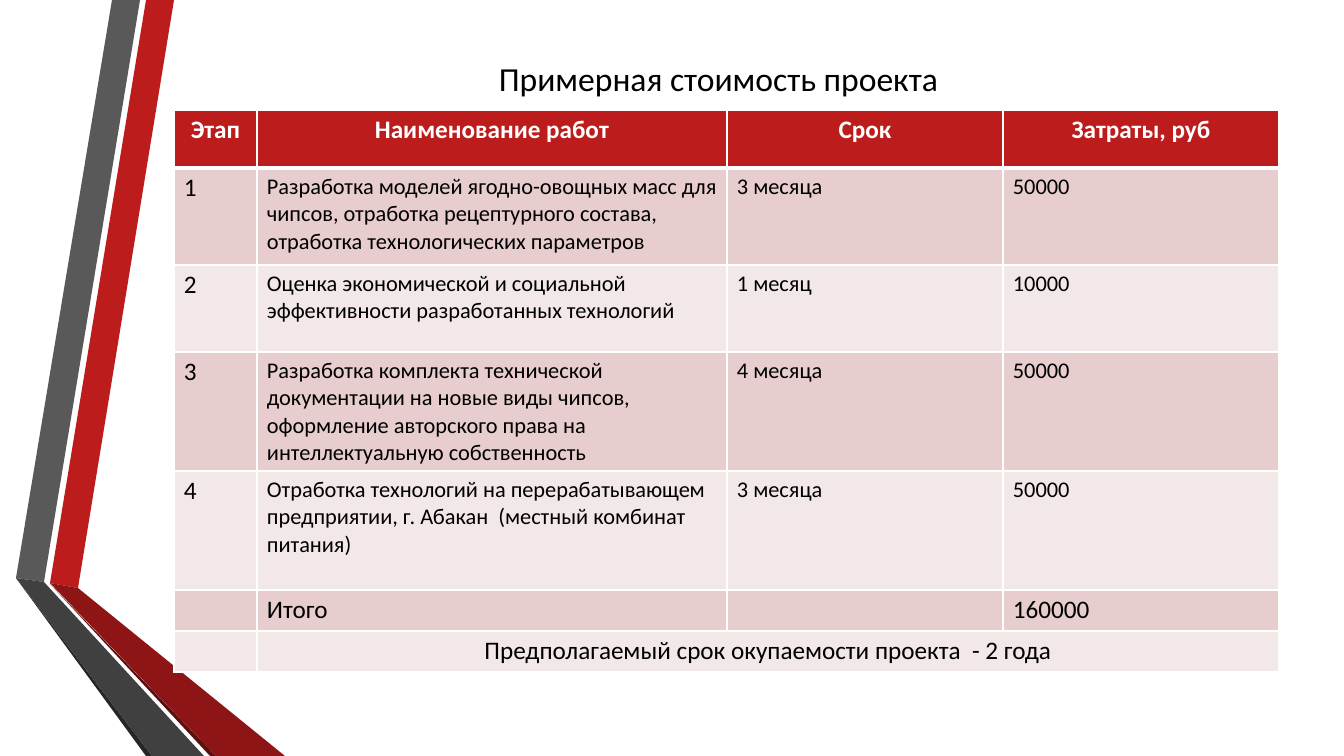
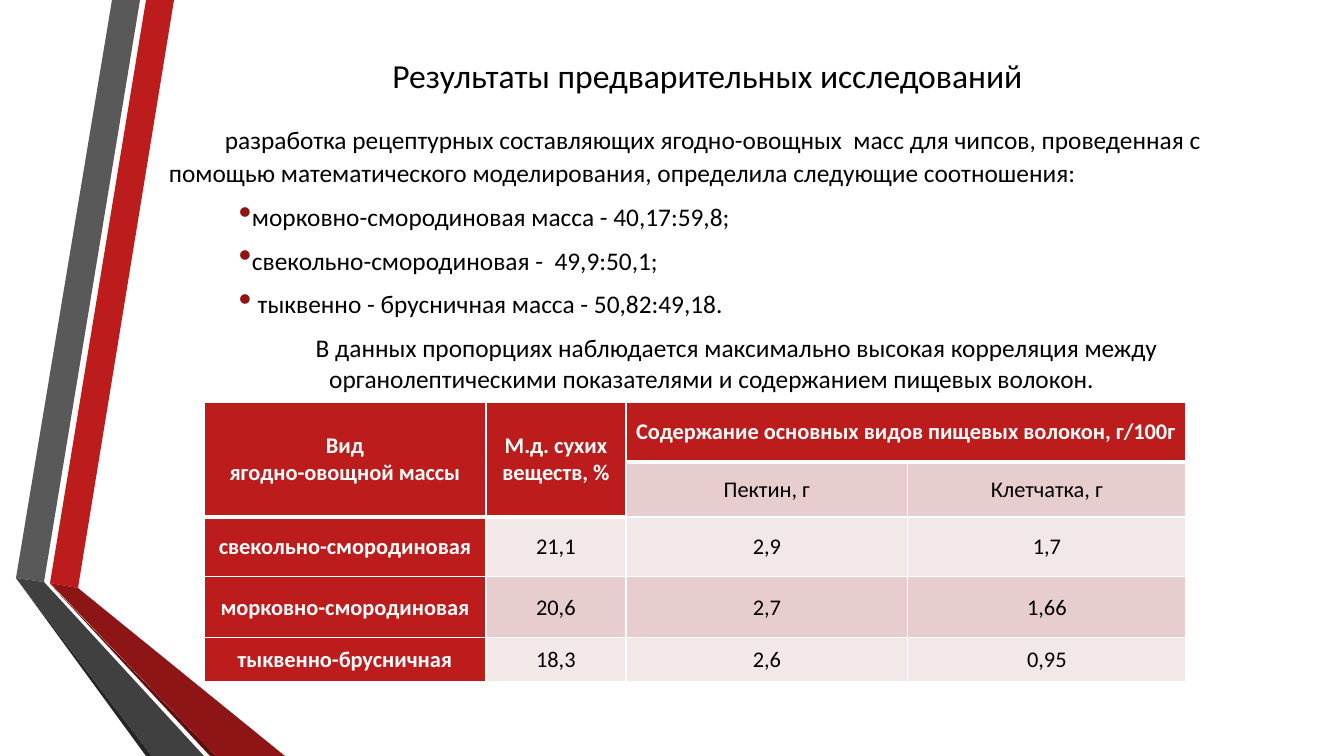
import dataclasses

import lxml.etree
import pptx
import pptx.dml.color
import pptx.enum.text
import pptx.oxml.ns
import pptx.util

ALIGN = pptx.enum.text.PP_ALIGN
ANCHOR = pptx.enum.text.MSO_ANCHOR
UNIT = 914400 / 100.8  # EMU in one px


@dataclasses.dataclass(frozen=True)
class Theme:
    font: str = "Calibri"
    white: str = "FFFFFF"
    black: str = "000000"
    red: str = "BC1C1C"
    wine: str = "8D1515"
    maroon: str = "5E0E0E"
    grey: str = "595959"
    coal: str = "404040"
    soot: str = "262626"
    rose: str = "E7CDCD"
    blush: str = "F3E8E8"
    title: float = 24
    body: float = 18.1
    large: float = 18
    small: float = 16
    thin: float = 1
    thick: float = 3


theme = Theme()


def style(part, size, color=theme.black, bold=False, **form):
    """Give a paragraph its font and the format values in form."""
    part.font.color.rgb = pptx.dml.color.RGBColor.from_string(color)
    look = {"name": theme.font, "size": pptx.util.Pt(size), "bold": bold}
    for name, value in look.items():
        setattr(part.font, name, value)
    for name, value in form.items():
        setattr(part, name, value)


def add(root, tag, **attrs):
    """Append a drawing element with its attributes."""
    node = lxml.etree.SubElement(root, pptx.oxml.ns.qn("a:" + tag))
    for name, value in attrs.items():
        node.set(name, str(value))
    return node


deck = pptx.Presentation()
deck.slide_width = round(1344 * UNIT)
deck.slide_height = round(756 * UNIT)
blank = deck.slide_layouts[6]

pages = [
    {
        "title": "Примерная стоимость проекта",
        "box": (166, 61, 1105, 35),
        "at": (174, 110),
        "cols": [83, 470, 276, 276],
        "rows": [58, 97, 87, 119, 119, 41, 41],
        "heads": [1, 1, 1, 1],
        "side": False,
        "inset": (10, 5),
        "anchor": ANCHOR.TOP,
        "merge": [(6, 1, 6, 3)],
        "small": {(row, col) for row in range(1, 5) for col in range(1, 4)},
        "center": {(0, 0), (0, 1), (0, 2), (0, 3), (6, 1)},
        "cells": [
            ["Этап", "Наименование работ", "Срок", "Затраты, руб"],
            ["1", "Разработка моделей ягодно-овощных масс для чипсов, отработка "
             "рецептурного состава, отработка технологических параметров",
             "3 месяца", "50000"],
            ["2", "Оценка экономической и социальной эффективности "
             "разработанных технологий", "1 месяц", "10000"],
            ["3", "Разработка комплекта технической документации на новые виды "
             "чипсов, оформление авторского права на интеллектуальную "
             "собственность", "4 месяца", "50000"],
            ["4", "Отработка технологий на перерабатывающем предприятии, "
             "г. Абакан  (местный комбинат питания)", "3 месяца", "50000"],
            ["", "Итого", "", "160000"],
            ["", "Предполагаемый срок окупаемости проекта  - 2 года", "", ""],
        ],
    },
    {
        "title": "Результаты предварительных исследований",
        "box": (155, 47, 1105, 56),
        "at": (204, 402),
        "cols": [282, 140, 282, 278],
        "rows": [60, 55, 60, 61, 44],
        "heads": [2, 2, 1, 1],
        "side": True,
        "inset": (7, 0),
        "anchor": ANCHOR.MIDDLE,
        "merge": [(0, 0, 1, 0), (0, 1, 1, 1), (0, 2, 0, 3)],
        "small": {(row, col) for row in range(5) for col in range(4)},
        "center": {(row, col) for row in range(5) for col in range(4)},
        "cells": [
            ["Вид\nягодно-овощной массы", "М.д. сухих веществ, %",
             "Содержание основных видов пищевых волокон, г/100г", ""],
            ["", "", "Пектин, г", "Клетчатка, г"],
            ["свекольно-смородиновая", "21,1", "2,9", "1,7"],
            ["морковно-смородиновая", "20,6", "2,7", "1,66"],
            ["тыквенно-брусничная", "18,3", "2,6", "0,95"],
        ],
    },
]
slides = [deck.slides.add_slide(blank) for page in pages]

# Folded ribbons, drawn once and moved to the shared layout
ribbons = [
    (theme.red, [(50, 583), (78, 588), (174, 0), (146, 0)]),
    (theme.grey, [(140, 0), (112, 0), (16, 578), (44, 582)]),
    (theme.soot, [(16, 578), (146, 756), (152, 756)]),
    (theme.maroon, [(50, 584), (210, 756), (216, 756)]),
    (theme.wine, [(50, 583), (216, 756), (285, 756), (78, 588)]),
    (theme.coal, [(204, 756), (44, 582), (16, 578), (152, 756)]),
]
for color, points in ribbons:
    pen = slides[0].shapes.build_freeform(*points[0], scale=UNIT)
    pen.add_line_segments(points[1:], close=True)
    ribbon = pen.convert_to_shape()
    ribbon.shadow.inherit = False
    ribbon.fill.solid()
    ribbon.fill.fore_color.rgb = pptx.dml.color.RGBColor.from_string(color)
    ribbon.line.fill.background()
    blank.shapes.element.append(ribbon.element)

# Titles and tables
for slide, page in zip(slides, pages):
    box = slide.shapes.add_textbox(*[round(n * UNIT) for n in page["box"]])
    frame = box.text_frame
    form = {"word_wrap": True, "vertical_anchor": ANCHOR.MIDDLE,
            "margin_top": 0, "margin_bottom": 0, "text": page["title"]}
    for name, value in form.items():
        setattr(frame, name, value)
    style(frame.paragraphs[0], theme.title, alignment=ALIGN.CENTER)

    cols, rows, heads = page["cols"], page["rows"], page["heads"]
    area = (*page["at"], sum(cols), sum(rows))
    table = slide.shapes.add_table(
        len(rows), len(cols), *[round(n * UNIT) for n in area]).table
    table.first_row = table.horz_banding = False
    for col, width in zip(table.columns, cols):
        col.width = round(width * UNIT)
    for row, height in zip(table.rows, rows):
        row.height = round(height * UNIT)

    wide, high = [round(n * UNIT) for n in page["inset"]]
    form = {"margin_left": wide, "margin_right": wide, "margin_top": high,
            "margin_bottom": high, "vertical_anchor": page["anchor"]}
    for r, texts in enumerate(page["cells"]):
        for c, text in enumerate(texts):
            cell = table.cell(r, c)
            for name, value in form.items():
                setattr(cell, name, value)
            strong = r < heads[c] or (page["side"] and c == 0)
            band = theme.rose if r % 2 else theme.blush
            cell.fill.solid()
            cell.fill.fore_color.rgb = pptx.dml.color.RGBColor.from_string(
                theme.red if strong else band)

            cell.text_frame.text = text
            for para in cell.text_frame.paragraphs:
                style(para,
                      theme.small if (r, c) in page["small"] else theme.large,
                      theme.white if strong else theme.black, strong,
                      alignment=ALIGN.CENTER if (r, c) in page["center"]
                      else ALIGN.LEFT)

            props = cell._tc.get_or_add_tcPr()
            weights = {"lnL": theme.thin, "lnR": theme.thin,
                       "lnT": theme.thick if r == heads[c] else theme.thin,
                       "lnB": theme.thick if r + 1 == heads[c] else theme.thin}
            for spot, (tag, weight) in enumerate(weights.items()):
                edge = add(props, tag, w=pptx.util.Pt(weight))
                add(add(edge, "solidFill"), "srgbClr", val=theme.white)
                props.insert(spot, edge)
    for top, left, low, right in page["merge"]:
        table.cell(top, left).merge(table.cell(low, right))

# Findings above the second table: text, left margin, first indent, bullet
notes = [
    ("разработка рецептурных составляющих ягодно-овощных  масс для чипсов, "
     "проведенная с помощью математического моделирования, определила "
     "следующие соотношения:", 0, 56, False),
    ("морковно-смородиновая масса - 40,17:59,8;", 31, 39, True),
    ("свекольно-смородиновая -  49,9:50,1;", 31, 39, True),
    (" тыквенно - брусничная масса - 50,82:49,18.", 31, 39, True),
    ("В данных пропорциях наблюдается максимально высокая корреляция между "
     "органолептическими показателями и содержанием пищевых волокон.",
     0, 50, False),
]
box = slides[1].shapes.add_textbox(
    *[round(n * UNIT) for n in (159, 121, 1105, 275)])
frame = box.text_frame
form = {"word_wrap": True, "margin_top": 0, "margin_bottom": 0,
        "text": "\n".join(note[0] for note in notes)}
for name, value in form.items():
    setattr(frame, name, value)
for para, (text, left, first, dot) in zip(frame.paragraphs, notes):
    style(para, theme.body, space_after=pptx.util.Pt(9.5))
    props = para._p.get_or_add_pPr()
    props.set("marL", str(round(left * UNIT)))
    props.set("indent", str(round(first * UNIT)))
    if dot:
        add(add(props, "buClr"), "srgbClr", val=theme.wine)
        add(props, "buSzPct", val=145000)
        add(props, "buChar", char="•")
        props.append(props.find(pptx.oxml.ns.qn("a:defRPr")))
frame.paragraphs[0].line_spacing = 1.1
frame.paragraphs[-1].alignment = ALIGN.CENTER

deck.save("out.pptx")
